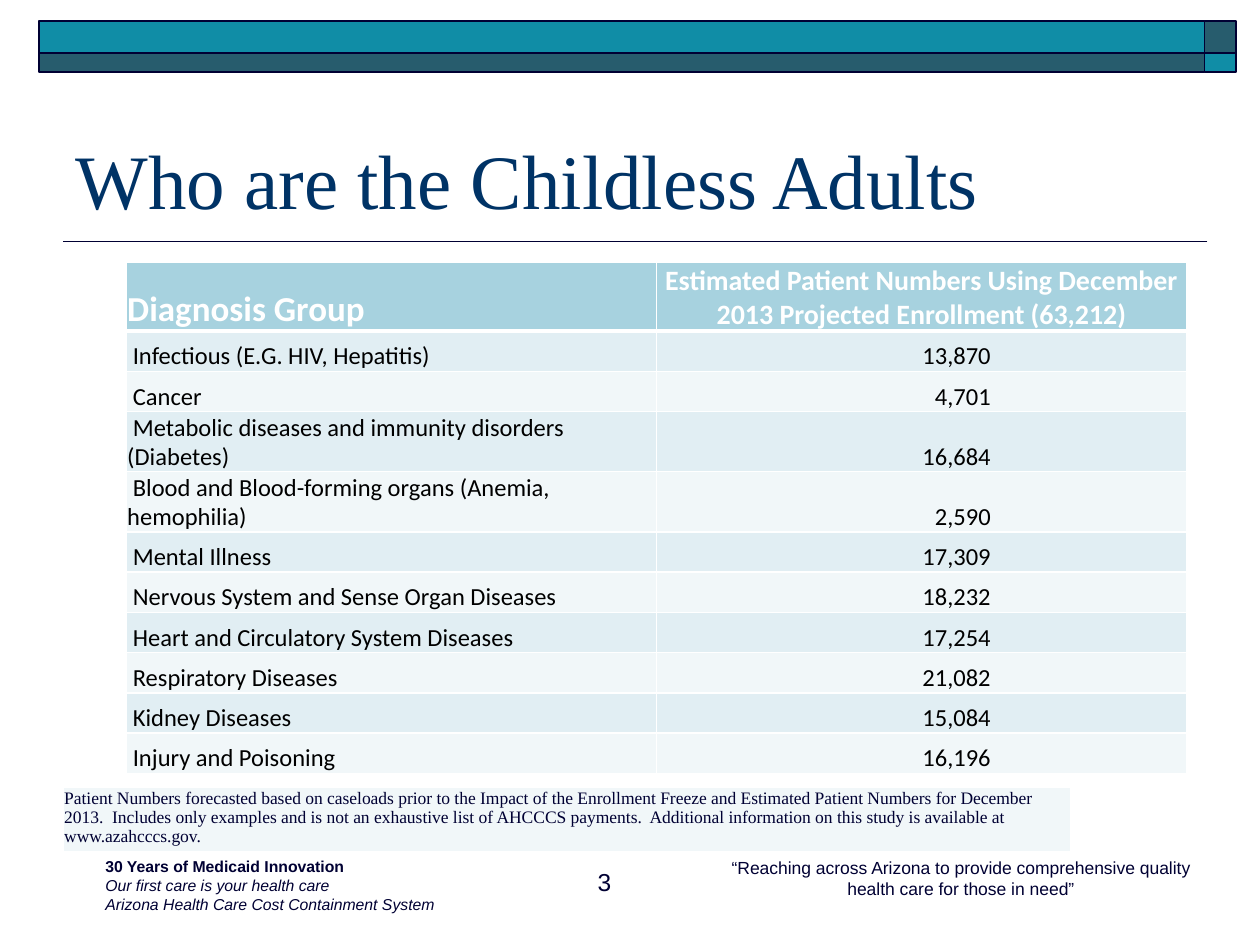
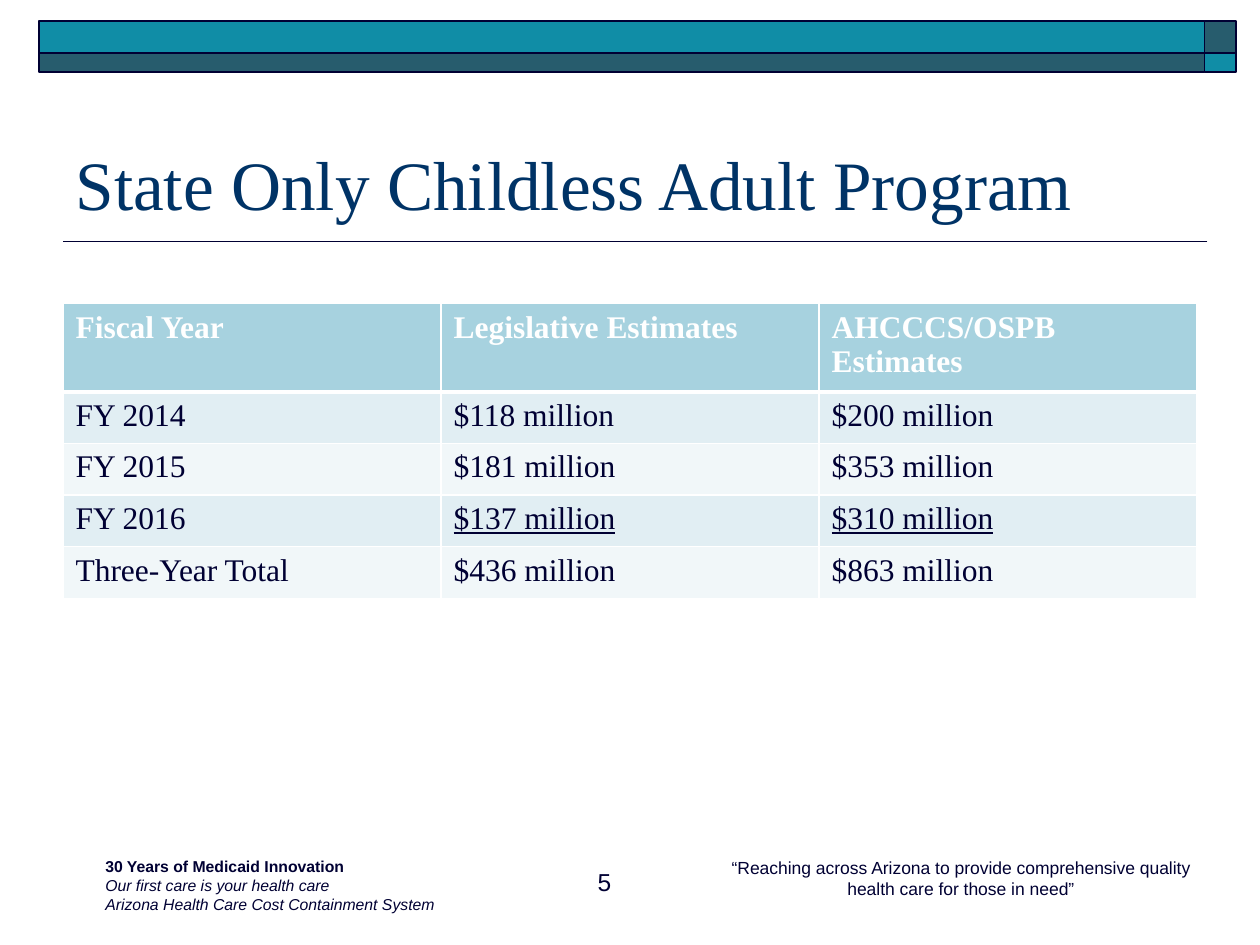
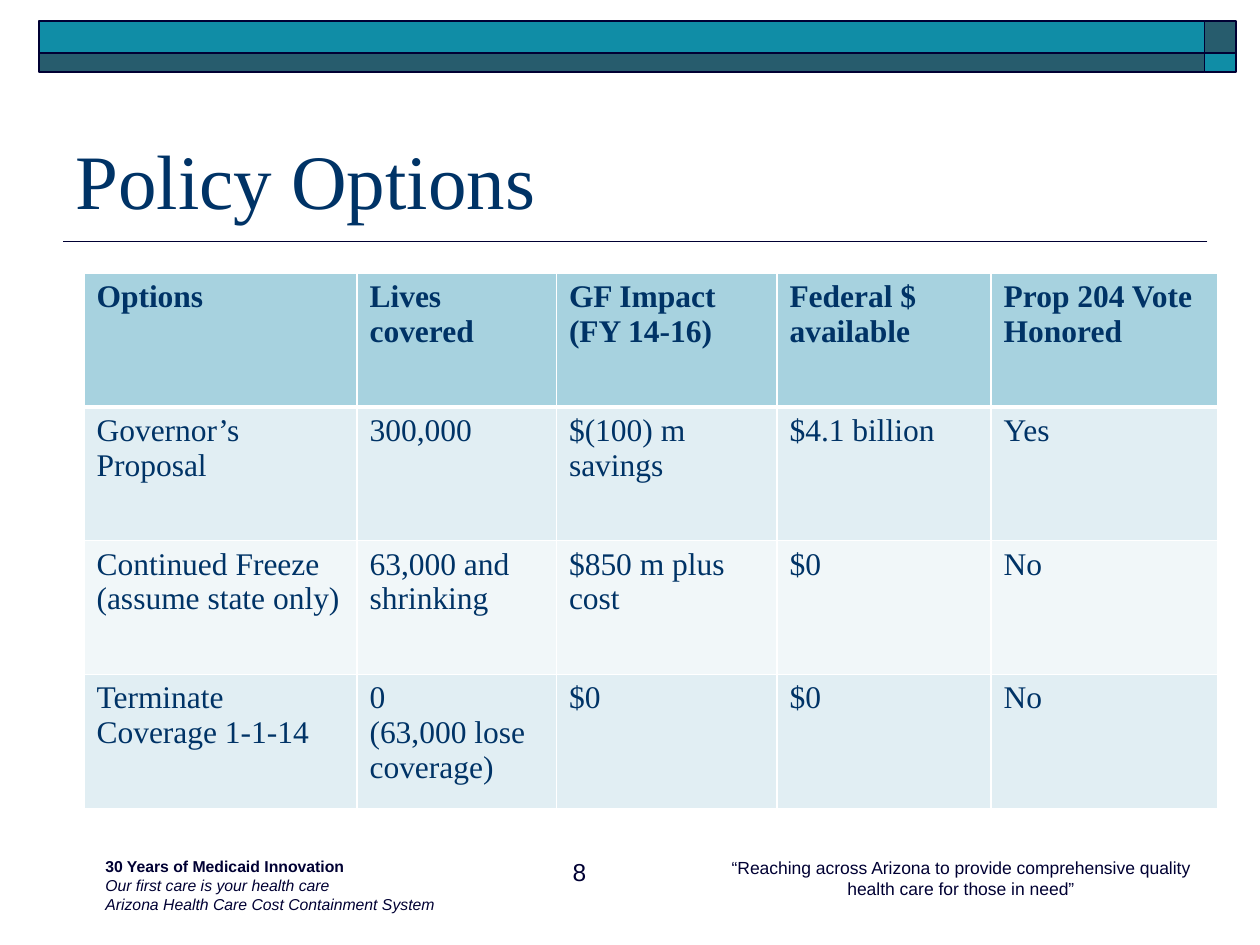
from dataclasses import dataclass, field, replace
from typing import NamedTuple

from lxml.etree import SubElement
from pptx import Presentation
from pptx.dml.color import RGBColor as Rgb
from pptx.enum.shapes import MSO_CONNECTOR as Link, MSO_SHAPE as Form
from pptx.enum.text import MSO_ANCHOR as Anchor, MSO_AUTO_SIZE as Fit, PP_ALIGN as Align
from pptx.oxml import parse_xml
from pptx.oxml.ns import nsdecls, qn
from pptx.util import Pt

NAVY, BLUE, WHITE, BLACK = "000033", "003366", "FFFFFF", "000000"
TEAL, SLATE = "108DA6", "275C6D"
HEAD, PALE, FAINT = "A7D2DF", "E1EEF3", "F1F7F9"
SERIF, SANS, HUMAN = "Times New Roman", "Arial", "Calibri"


class Box(NamedTuple):
    left: float
    top: float
    width: float
    height: float


class Band(NamedTuple):
    box: Box
    tint: str


@dataclass(frozen=True)
class Look:
    face: str
    size: float
    ink: str
    bold: bool = False
    italic: bool = False
    align: Align = Align.LEFT
    anchor: Anchor = Anchor.TOP
    pad: tuple[float, ...] = (7.2, 3.6, 7.2, 3.6)
    indent: float = 0


@dataclass(frozen=True)
class Grid:
    left: float
    top: float
    widths: list[float]
    heights: list[float]
    rows: list[tuple[str, ...]]
    heads: list[Look]
    cells: list[Look]
    fills: tuple[str, ...] = (HEAD, PALE, FAINT)
    under: set[tuple[int, int]] = field(default_factory=set)


@dataclass(frozen=True)
class Page:
    title: str
    size: float
    number: str
    spot: Box
    grids: list[Grid]


BANDS = [
    Band(Box(688.3, 12.2, 18, 18), SLATE),
    Band(Box(22.3, 12.2, 666, 18), TEAL),
    Band(Box(22.3, 30.2, 666, 10.8), SLATE),
    Band(Box(688.3, 30.2, 18, 10.8), TEAL),
]
RULE = (690, 138, 36, 138)
TITLE = Box(36, 42, 648, 90)
MOTTO = Box(402, 486, 294, 31)
CREDO = Box(18, 486, 672, 37.4)
SPOT = Box(320.4, 492, 36, 28.8)

SMALL = Look(SANS, 9, NAVY, italic=True, pad=(42.2, 3.6, 7.2, 3.6))
MID = Look(SANS, 10, NAVY, align=Align.CENTER)
COUNT = Look(SANS, 14, NAVY, align=Align.RIGHT)

TIGHT = (0.72, 0.72, 0.72, 0)
GROUP = Look(HUMAN, 14, BLACK, anchor=Anchor.BOTTOM, pad=TIGHT, indent=3.2)
TOTAL = replace(GROUP, align=Align.RIGHT, pad=(0.72, 0.72, 112, 0), indent=0)
TOP = replace(GROUP, size=20, ink=WHITE, bold=True, indent=0)
YEAR = Look(SERIF, 18, NAVY)
PLAN = Look(SERIF, 18, BLUE)
NOTE = Look(SERIF, 10, NAVY, pad=TIGHT)

GROUPS = [
    ("Diagnosis Group", "Estimated Patient Numbers Using December 2013 Projected Enrollment (63,212)"),
    ("Infectious (E.G. HIV, Hepatitis)", "13,870"),
    ("Cancer", "4,701"),
    ("Metabolic diseases and immunity disorders (Diabetes)", "16,684"),
    ("Blood and Blood-forming organs (Anemia, hemophilia)", "2,590"),
    ("Mental Illness", "17,309"),
    ("Nervous System and Sense Organ Diseases", "18,232"),
    ("Heart and Circulatory System Diseases", "17,254"),
    ("Respiratory Diseases", "21,082"),
    ("Kidney Diseases", "15,084"),
    ("Injury and Poisoning", "16,196"),
]
SOURCE = (
    "Patient Numbers forecasted based on caseloads prior to the Impact of the Enrollment Freeze "
    "and Estimated Patient Numbers for December 2013.  Includes only examples and is not an "
    "exhaustive list of AHCCCS payments.  Additional information on this study is available at "
    "www.azahcccs.gov."
)
YEARS = [
    ("Fiscal Year", "Legislative Estimates", "AHCCCS/OSPB Estimates"),
    ("FY 2014", "$118 million", "$200 million"),
    ("FY 2015", "$181 million", "$353 million"),
    ("FY 2016", "$137 million", "$310 million"),
    ("Three-Year Total", "$436 million", "$863 million"),
]
PLANS = [
    ("Options", "Lives covered", "GF Impact (FY 14-16)", "Federal $ available", "Prop 204 Vote Honored"),
    ("Governor’s Proposal", "300,000", "$(100) m savings", "$4.1 billion", "Yes"),
    ("Continued Freeze (assume state only)", "63,000 and shrinking", "$850 m plus cost", "$0", "No"),
    ("Terminate Coverage 1-1-14", "0\n(63,000 lose coverage)", "$0", "$0", "No"),
]

PAGES = [
    Page("Who are the Childless Adults", 44, "3", SPOT, [
        Grid(72, 150, [303.1] * 2, [34.5] + [23.04] * 10, GROUPS,
             [TOP, replace(TOP, size=16, align=Align.CENTER)], [GROUP, TOTAL]),
        Grid(36, 450, [576], [33], [(SOURCE,)], [NOTE], [NOTE], (FAINT,)),
    ]),
    Page("State Only Childless Adult Program", 39.6, "5", SPOT, [
        Grid(36, 173.5, [216] * 3, [49.4] + [29.5] * 4, YEARS,
             [replace(YEAR, ink=WHITE, bold=True)] * 3, [YEAR] * 3, under={(3, 1), (3, 2)}),
    ]),
    Page("Policy Options", 44, "8", Box(174, 486, 168, 37.4), [
        Grid(48, 156, [156, 114, 126, 122.4, 129.6], [76.5] * 4, PLANS,
             [replace(PLAN, bold=True)] * 5, [PLAN] * 5),
    ]),
]


def tint(code: str) -> Rgb:
    return Rgb.from_string(code)


def assign(item, values: dict) -> None:
    for name, value in values.items():
        setattr(item, name, value)


def pads(look: Look) -> dict:
    names = ("margin_left", "margin_top", "margin_right", "margin_bottom")
    return dict(zip(names, map(Pt, look.pad)))


def style(frame, look: Look, **extra) -> None:
    for para in frame.paragraphs:
        para.alignment = look.align
        if look.indent:
            para._p.get_or_add_pPr().set("indent", str(Pt(look.indent)))
        for run in para.runs:
            assign(run.font, {"name": look.face, "size": Pt(look.size),
                              "bold": look.bold, "italic": look.italic, **extra})
            run.font.color.rgb = tint(look.ink)


def write(slide, box: Box, text: str, look: Look):
    frame = slide.shapes.add_textbox(*map(Pt, box)).text_frame
    assign(frame, {"word_wrap": True, "vertical_anchor": look.anchor, **pads(look)})
    frame.text = text
    style(frame, look)
    return frame


def edge(cell, top: float, base: float) -> None:
    props = cell._tc.get_or_add_tcPr()
    sides = {"lnL": 1, "lnR": 1, "lnT": top, "lnB": base}
    for spot, (side, width) in enumerate(sides.items()):
        props.insert(spot, parse_xml(
            f'<a:{side} {nsdecls("a")} w="{Pt(width)}"><a:solidFill>'
            f'<a:srgbClr val="{WHITE}"/></a:solidFill></a:{side}>'))


def tabulate(slide, grid: Grid) -> None:
    many = len(grid.rows) > 1
    table = slide.shapes.add_table(
        len(grid.rows), len(grid.widths), Pt(grid.left), Pt(grid.top),
        Pt(sum(grid.widths)), Pt(sum(grid.heights))).table
    assign(table, {"first_row": many, "horz_banding": False})
    for col, width in zip(table.columns, grid.widths):
        col.width = Pt(width)
    for row, height in zip(table.rows, grid.heights):
        row.height = Pt(height)
    for r, row in enumerate(grid.rows):
        for c, text in enumerate(row):
            look = grid.cells[c] if r else grid.heads[c]
            cell = table.cell(r, c)
            cell.text = text
            assign(cell, {"vertical_anchor": look.anchor, **pads(look)})
            style(cell.text_frame, look, underline=(r, c) in grid.under)
            cell.fill.solid()
            cell.fill.fore_color.rgb = tint(grid.fills[1 + (r - 1) % 2 if r else 0])
            edge(cell, 3 if r == 1 else 1, 3 if many and r == 0 else 1)


def frame(slide) -> None:
    rule = slide.shapes.add_connector(Link.STRAIGHT, *map(Pt, RULE))
    SubElement(rule._element.spPr, qn("a:effectLst"))
    lines = [rule.line]
    for band in BANDS:
        shape = slide.shapes.add_shape(Form.RECTANGLE, *map(Pt, band.box))
        shape.shadow.inherit = False
        shape.fill.solid()
        shape.fill.fore_color.rgb = tint(band.tint)
        lines.append(shape.line)
    for line in lines:
        line.color.rgb = tint(NAVY)
        line.width = Pt(1)
    write(slide, MOTTO, "“Reaching across Arizona to provide comprehensive quality "
          "health care for those in need”", MID)
    credo = write(slide, CREDO, "30 Years of Medicaid Innovation\nOur first care is your health care\n"
                  "Arizona Health Care Cost Containment System", SMALL)
    assign(credo.paragraphs[0].runs[0].font, {"bold": True, "italic": False})


def head(slide, page: Page) -> None:
    title = slide.shapes.title
    assign(title, dict(zip(("left", "top", "width", "height"), map(Pt, TITLE))))
    look = Look(SERIF, page.size, BLUE, anchor=Anchor.BOTTOM)
    text = title.text_frame
    text.text = page.title
    assign(text, {"word_wrap": True, "auto_size": Fit.NONE,
                  "vertical_anchor": look.anchor, **pads(look)})
    style(text, look)


def main() -> None:
    deck = Presentation()
    assign(deck, {"slide_width": Pt(720), "slide_height": Pt(540)})
    for page in PAGES:
        slide = deck.slides.add_slide(deck.slide_layouts[5])
        frame(slide)
        head(slide, page)
        for grid in page.grids:
            tabulate(slide, grid)
        write(slide, page.spot, page.number, COUNT)
    deck.save("out.pptx")


if __name__ == "__main__":
    main()
